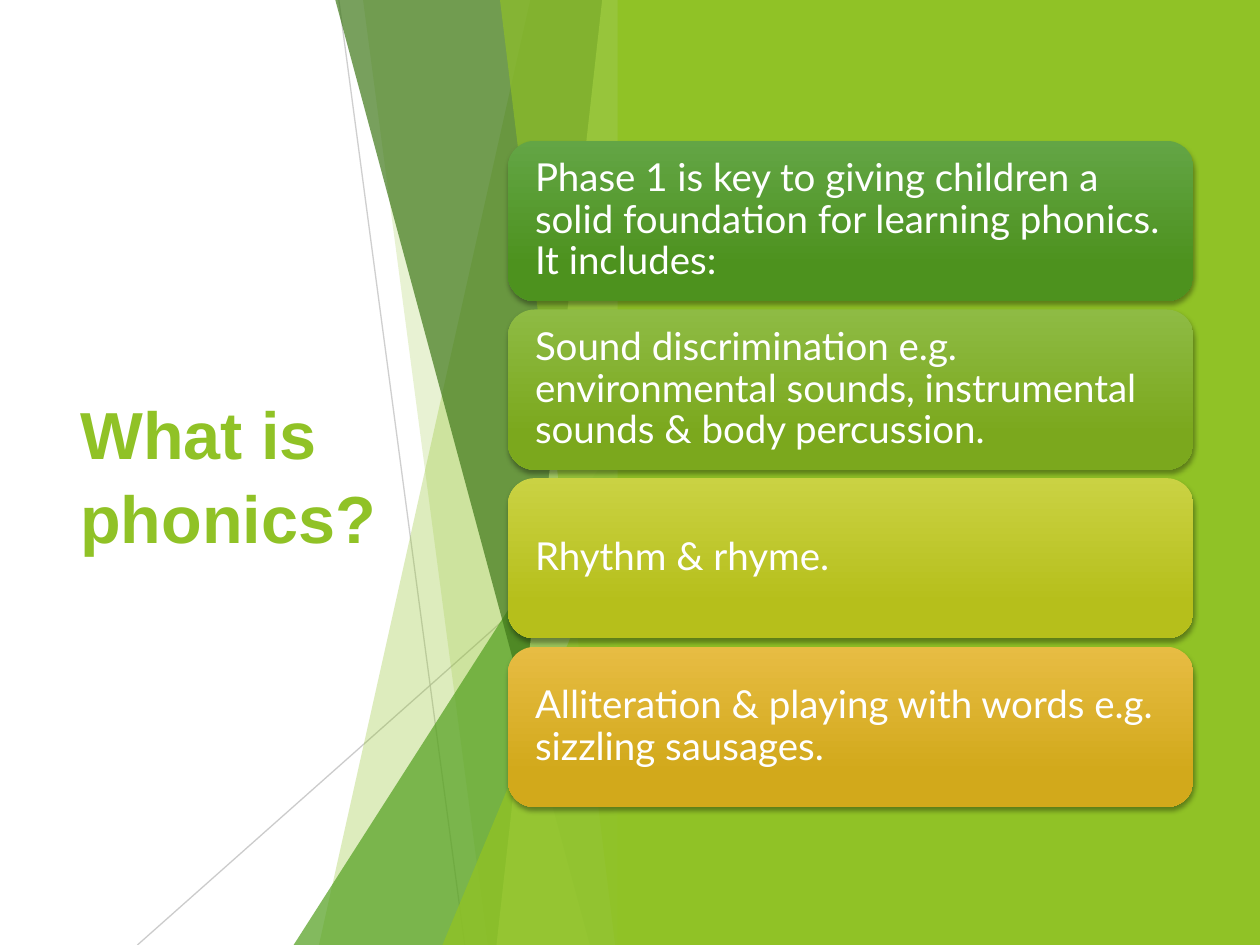
"""Build the "What is phonics?" slide with its faceted backdrop and four cards."""
import lxml.etree
import pptx
import pptx.dml.color
import pptx.enum.shapes
import pptx.enum.text
import pptx.oxml.ns
import pptx.util

Cm = pptx.util.Cm
Pt = pptx.util.Pt
qn = pptx.oxml.ns.qn
SHAPE = pptx.enum.shapes.MSO_SHAPE


def rgb(value):
    return pptx.dml.color.RGBColor.from_string(value)


def set_opacity(part, percent):
    tint = next(part._element.spPr.iter(qn("a:srgbClr")))
    lxml.etree.SubElement(tint, qn("a:alpha"), val=str(percent * 1000))


deck = pptx.Presentation()
deck.slide_width, deck.slide_height = Cm(25.4), Cm(19.05)
slide = deck.slides.add_slide(deck.slide_layouts[6])
shapes = slide.shapes
bottom, facet_right = 19.05, 12.7

title = shapes.add_textbox(Cm(1.37), Cm(3.84), Cm(7.39), Cm(11.38))
title_format = {"word_wrap": True, "vertical_anchor": pptx.enum.text.MSO_ANCHOR.MIDDLE}
for key, value in title_format.items():
    setattr(title.text_frame, key, value)
heading = title.text_frame.paragraphs[0]
heading.text = "What is phonics?"
heading.line_spacing = 1.05
for key, value in {"name": "Arial", "size": Pt(38), "bold": True}.items():
    setattr(heading.font, key, value)
heading.font.color.rgb = rgb("90C226")

rays = [(6.83, 0, 9.37, bottom, 75), (facet_right, 10.24, 2.77, bottom, 80)]
for x1, y1, x2, y2, opacity in rays:
    ray = shapes.add_connector(
        pptx.enum.shapes.MSO_CONNECTOR.STRAIGHT, Cm(x1), Cm(y1), Cm(x2), Cm(y2))
    ray.line.width = Pt(0.75)
    ray.line.color.rgb = rgb("BFBFBF")
    set_opacity(ray, opacity)
    lxml.etree.SubElement(ray._element.spPr, qn("a:effectLst"))

# fmt: off
facets = [
    ("band", 10.69, 6.43, "90C226", 30),
    ("band", 7.32, 9.83, "90C226", 20),
    ("triangle", 8.46, 5.92, "54A021", 72),
    ("band", 6.76, 11.89, "3F7819", 70),
    ("band", 12.14, 10.01, "C0E474", 70),
    ("band", 10.08, 12.4, "90C226", 65),
    ("triangle", 9.98, 8.92, "90C226", 80),
]
# fmt: on
for kind, top, foot, tone, opacity in facets:
    if kind == "band":
        outline = shapes.build_freeform(Cm(top), Cm(0))
        outline.add_line_segments([
            (Cm(facet_right), Cm(0)),
            (Cm(facet_right), Cm(bottom)),
            (Cm(foot), Cm(bottom)),
        ])
        facet = outline.convert_to_shape()
    else:
        facet = shapes.add_shape(
            SHAPE.ISOSCELES_TRIANGLE, Cm(foot), Cm(top),
            Cm(facet_right - foot), Cm(bottom - top))
        facet.adjustments[0] = 1
    facet.shadow.inherit = False
    facet.fill.solid()
    facet.fill.fore_color.rgb = rgb(tone)
    set_opacity(facet, opacity)
    facet.line.fill.background()

panel = shapes.add_shape(SHAPE.RECTANGLE, Cm(12.45), Cm(0), Cm(12.95), Cm(bottom))
panel.shadow.inherit = False
panel.fill.solid()
panel.fill.fore_color.rgb = rgb("90C226")
panel.line.fill.background()

cards = [
    ("Phase 1 is key to giving children a solid foundation for learning phonics. "
     "It includes:", "63A545", "4D921E"),
    ("Sound discrimination e.g. environmental sounds, instrumental sounds "
     "& body percussion.", "8EBB44", "7BA81D"),
    ("Rhythm & rhyme.", "CAD243", "B6BF1B"),
    ("Alliteration & playing with words e.g. sizzling sausages.", "E7BC43", "D2A91B"),
]
card_format = {
    "word_wrap": True,
    "vertical_anchor": pptx.enum.text.MSO_ANCHOR.MIDDLE,
    "margin_left": Cm(0.39),
    "margin_right": Cm(0.39),
    "margin_top": Cm(0.39),
    "margin_bottom": Cm(0.39),
}
shadow_format = {
    "blurRad": str(Pt(3)), "dist": str(Pt(2)), "dir": "5400000", "rotWithShape": "0"}
for row, (wording, light, dark) in enumerate(cards):
    card = shapes.add_shape(
        SHAPE.ROUNDED_RECTANGLE, Cm(10.24), Cm(2.84 + 3.4 * row), Cm(13.82), Cm(3.23))
    card.line.fill.background()
    card.fill.gradient()
    card.fill.gradient_angle = 270
    for stop, tone, position in zip(card.fill.gradient_stops, (light, dark), (0, 0.78)):
        stop.color.rgb = rgb(tone)
        stop.position = position
    card.shadow.inherit = False
    effects = card._element.spPr.find(qn("a:effectLst"))
    shadow = lxml.etree.SubElement(effects, qn("a:outerShdw"), shadow_format)
    shade = lxml.etree.SubElement(shadow, qn("a:srgbClr"), val="000000")
    lxml.etree.SubElement(shade, qn("a:alpha"), val="35000")
    for key, value in card_format.items():
        setattr(card.text_frame, key, value)
    point = card.text_frame.paragraphs[0]
    point.text = wording
    point.alignment = pptx.enum.text.PP_ALIGN.LEFT
    point.line_spacing = 0.9
    for key, value in {"name": "Lato", "size": Pt(22)}.items():
        setattr(point.font, key, value)
    point.font.color.rgb = rgb("FFFFFF")

deck.save("out.pptx")
